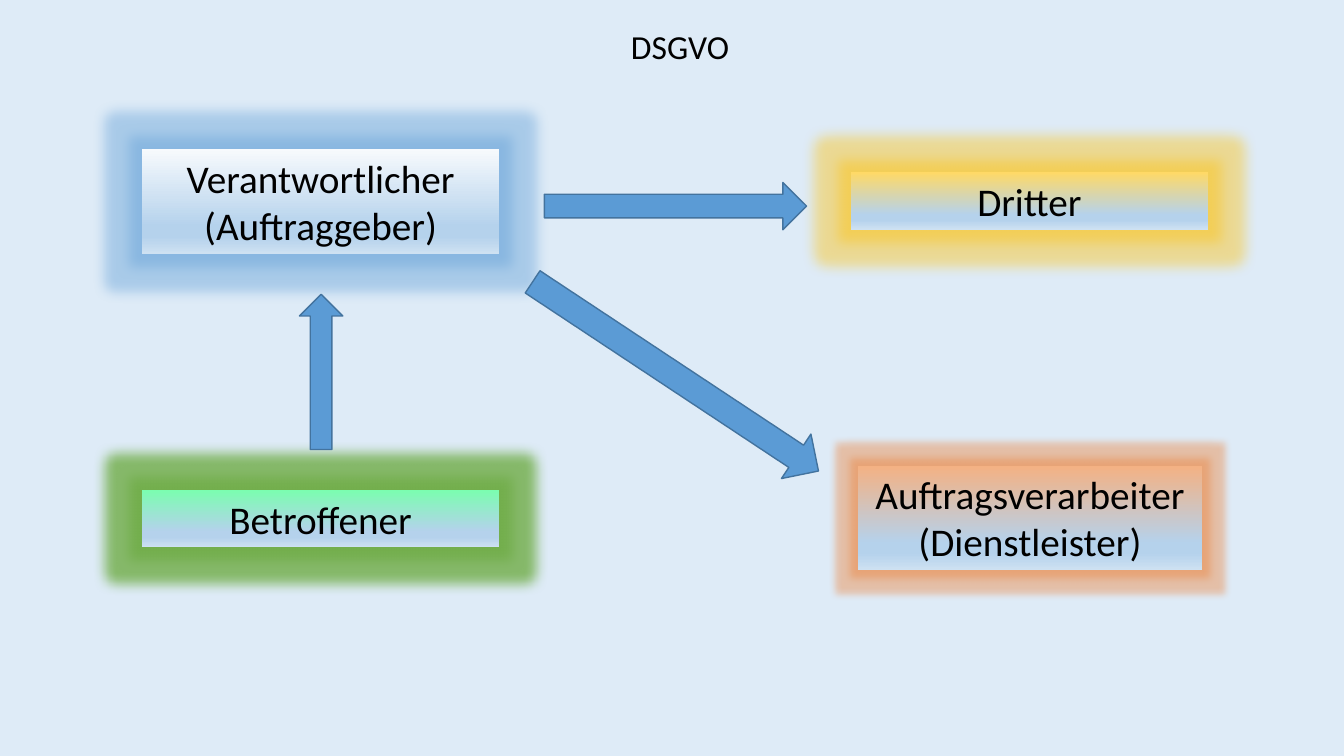
import dataclasses
import pptx
import pptx.dml.color
import pptx.enum.shapes
import pptx.enum.text
import pptx.util
import lxml.etree
import pptx.oxml.ns

SHAPES = pptx.enum.shapes.MSO_SHAPE
WIDTH, HEIGHT = 13.33, 7.5


@dataclasses.dataclass(frozen=True)
class Theme:
    background: str = "DEEBF7"
    text: str = "000000"
    arrow: str = "5B9BD5"
    arrow_line: str = "43739E"
    gradient_end: tuple = ((74, "B5D2EC"), (83, "B5D2EC"), (100, "CEE1F2"))
    font: str = "Calibri"
    title_size: int = 24
    role_size: int = 28


THEME = Theme()


def color(value):
    return pptx.dml.color.RGBColor.from_string(value)


def frame(left, top, width, height):
    shares = (left * WIDTH, top * HEIGHT, width * WIDTH, height * HEIGHT)
    return [pptx.util.Inches(share) for share in shares]


def add_element(parent, tag, **attributes):
    element = lxml.etree.SubElement(parent, pptx.oxml.ns.qn(tag))
    for name, value in attributes.items():
        element.set(name, str(value))
    return element


def write_text(shape, text, size, wrap=True):
    text_frame = shape.text_frame
    text_frame.word_wrap = wrap
    text_frame.auto_size = pptx.enum.text.MSO_AUTO_SIZE.SHAPE_TO_FIT_TEXT
    text_frame.text = text
    for paragraph in text_frame.paragraphs:
        paragraph.alignment = pptx.enum.text.PP_ALIGN.CENTER
        for run in paragraph.runs:
            run.font.name = THEME.font
            run.font.size = pptx.util.Pt(size)
            run.font.color.rgb = color(THEME.text)


def fill_gradient(shape, start):
    properties = shape._element.spPr
    gradient = add_element(properties, "a:gradFill", rotWithShape=1)
    stops = add_element(gradient, "a:gsLst")
    for position, value in ((0, start), *THEME.gradient_end):
        stop = add_element(stops, "a:gs", pos=position * 1000)
        add_element(stop, "a:srgbClr", val=value)
    add_element(gradient, "a:lin", ang=90 * 60000, scaled=0)


def add_glow(shape, value, radius, opacity):
    effects = add_element(shape._element.spPr, "a:effectLst")
    glow = add_element(effects, "a:glow", rad=pptx.util.Pt(radius))
    glow_color = add_element(glow, "a:srgbClr", val=value)
    add_element(glow_color, "a:alpha", val=opacity * 1000)


def add_role(slide, text, place, start, glow, radius=18, opacity=40, wrap=True):
    shape = slide.shapes.add_textbox(*frame(*place))
    properties = shape._element.spPr
    properties.remove(properties.find(pptx.oxml.ns.qn("a:noFill")))
    fill_gradient(shape, start)
    add_glow(shape, glow, radius, opacity)
    write_text(shape, text, THEME.role_size, wrap)


def add_arrow(slide, kind, place, rotation=0):
    arrow = slide.shapes.add_shape(kind, *frame(*place))
    arrow.shadow.inherit = False
    arrow.rotation = rotation
    arrow.fill.solid()
    arrow.fill.fore_color.rgb = color(THEME.arrow)
    arrow.line.color.rgb = color(THEME.arrow_line)
    arrow.line.width = pptx.util.Pt(1)


def main():
    presentation = pptx.Presentation()
    presentation.slide_width = pptx.util.Inches(WIDTH)
    presentation.slide_height = pptx.util.Inches(HEIGHT)
    slide = presentation.slides.add_slide(presentation.slide_layouts[6])
    slide.background.fill.solid()
    slide.background.fill.fore_color.rgb = color(THEME.background)

    left, role_width = 1.41 / WIDTH, 3.54 / WIDTH
    one_line, two_lines = 0.57 / HEIGHT, 1.04 / HEIGHT
    add_role(slide, "Verantwortlicher\n(Auftraggeber)",
             (left, 1.48 / HEIGHT, role_width, two_lines), "F7FAFD", "5B9BD5")
    add_role(slide, "Auftragsverarbeiter\n(Dienstleister)",
             (8.51 / WIDTH, 4.62 / HEIGHT, 3.41 / WIDTH, two_lines),
             "F4B183", "ED7D31", radius=11, wrap=False)
    add_role(slide, "Dritter",
             (8.44 / WIDTH, 1.71 / HEIGHT, role_width, one_line), "FFD966", "FFC000")
    add_role(slide, "Betroffener",
             (left, 4.86 / HEIGHT, role_width, one_line), "7BFDB0", "70AD47", opacity=80)

    title = slide.shapes.add_textbox(
        *frame(5.78 / WIDTH, 0.21 / HEIGHT, 1.93 / WIDTH, 0.5 / HEIGHT))
    write_text(title, "DSGVO", THEME.title_size)

    add_arrow(slide, SHAPES.UP_ARROW,
              (2.97 / WIDTH, 2.92 / HEIGHT, 0.43 / WIDTH, 1.54 / HEIGHT))
    add_arrow(slide, SHAPES.RIGHT_ARROW,
              (5.4 / WIDTH, 1.81 / HEIGHT, 2.6 / WIDTH, 0.47 / HEIGHT))
    add_arrow(slide, SHAPES.RIGHT_ARROW,
              (5 / WIDTH, 3.47 / HEIGHT, 3.4 / WIDTH, 0.53 / HEIGHT), rotation=33.5)
    presentation.save("out.pptx")


if __name__ == "__main__":
    main()
